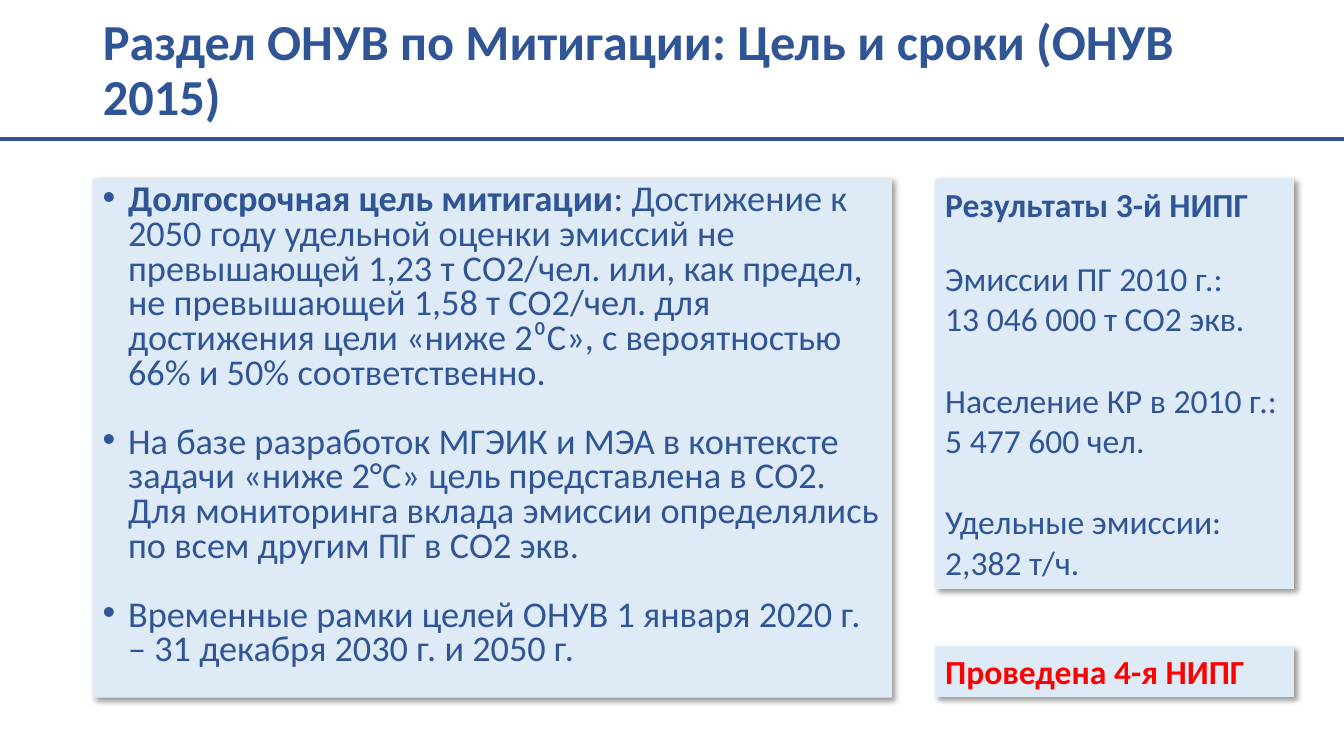
from dataclasses import dataclass

from lxml.etree import SubElement as Sub
from pptx import Presentation
from pptx.dml.color import RGBColor as Rgb
from pptx.enum.shapes import MSO_CONNECTOR as Conn, MSO_SHAPE as Kind
from pptx.enum.text import MSO_ANCHOR as Anchor, PP_ALIGN as Align
from pptx.oxml.ns import qn
from pptx.util import Cm, Pt


@dataclass(frozen=True)
class Theme:
    """Colours, font and type sizes of the slide."""
    ink: Rgb = Rgb(0x2F, 0x55, 0x97)
    pale: Rgb = Rgb(0xDE, 0xEB, 0xF7)
    alert: Rgb = Rgb(0xFF, 0, 0)
    font: str = "Calibri"
    head: float = 36
    body: float = 25.9
    side: float = 24


THEME = Theme()
WIDE, HIGH = 33.87, 19.05
LEFT, TOP, SIDE = 2.34, 4.5, 23.57

GOALS = [
    [("Долгосрочная цель митигации", True),
     (": Достижение к 2050 году удельной оценки эмиссий не превышающей "
      "1,23 т СО2/чел. или, как предел, не превышающей 1,58 т СО2/чел. для "
      "достижения цели «ниже 2⁰С», с вероятностью 66% и 50% соответственно.", False)],
    [("На базе разработок МГЭИК и МЭА в контексте задачи «ниже 2°C» цель "
      "представлена в СО2. Для мониторинга вклада эмиссии определялись "
      "по всем другим ПГ в СО2 экв.", False)],
    [("Временные рамки целей ОНУВ 1 января 2020 г. – 31 декабря 2030 г. "
      "и 2050 г.", False)],
]
FACTS = [
    ("Эмиссии ПГ 2010 г.:", "13 046 000 т СО2 экв.", 24.4),
    ("Население КР в 2010 г.:", "5 477 600 чел.", 29.3),
    ("Удельные эмиссии:", "2,382 т/ч.", 29.3),
]


def write(para, text, size, bold=False, color=THEME.ink):
    """Add one formatted run to a paragraph."""
    run = para.add_run()
    run.text = text
    font = run.font
    font.name, font.size, font.bold = THEME.font, Pt(size), bold
    font.color.rgb = color


def lines(frame, count):
    """Yield the given number of left-aligned paragraphs of a frame."""
    for i in range(count):
        para = frame.add_paragraph() if i else frame.paragraphs[0]
        para.alignment = Align.LEFT
        yield para


def bullet(para):
    """Give a paragraph a hanging round bullet."""
    props = para._p.get_or_add_pPr()
    props.set("marL", str(Cm(0.64)))
    props.set("indent", str(-Cm(0.64)))
    Sub(props, qn("a:buFont"), typeface="Arial")
    Sub(props, qn("a:buChar"), char="•")


def panel(slide, x, y, w, h):
    """Draw a pale card with a soft shadow and return its text frame."""
    card = slide.shapes.add_shape(Kind.RECTANGLE, Cm(x), Cm(y), Cm(w), Cm(h))
    card.fill.solid()
    card.fill.fore_color.rgb = THEME.pale
    card.line.fill.background()
    card.shadow.inherit = False
    glow = Sub(card._element.spPr.find(qn("a:effectLst")), qn("a:outerShdw"),
               blurRad=str(Pt(4)), dist=str(Pt(3)), dir=str(45 * 60000),
               algn="tl", rotWithShape="0")
    tint = Sub(glow, qn("a:srgbClr"), val="000000")
    Sub(tint, qn("a:alpha"), val="40000")
    frame = card.text_frame
    frame.word_wrap = True
    frame.vertical_anchor = Anchor.TOP
    return frame


def header(slide, x, y, w, h):
    """Place the title and the rule beneath it."""
    title = slide.shapes.title
    title.left, title.top, title.width, title.height = Cm(x), Cm(y), Cm(w), Cm(h)
    frame = title.text_frame
    frame.word_wrap = True
    frame.vertical_anchor = Anchor.MIDDLE
    para = next(lines(frame, 1))
    para.line_spacing = 0.9
    write(para, "Раздел ОНУВ по Митигации: Цель и сроки (ОНУВ 2015)", THEME.head, True)
    base = Cm(y + h + 0.25)
    rule = slide.shapes.add_connector(Conn.STRAIGHT, 0, base, Cm(WIDE), base)
    rule.line.color.rgb = THEME.ink
    rule.line.width = Pt(3)
    Sub(rule._element.spPr, qn("a:effectLst"))


def goals(slide, x, y, w, h):
    """Place the card of bulleted goals."""
    frame = panel(slide, x, y, w, h)
    for para, parts in zip(lines(frame, len(GOALS)), GOALS):
        para.line_spacing = 0.8
        para.space_after = Pt(0 if parts is GOALS[-1] else 24)
        bullet(para)
        for text, bold in parts:
            write(para, text, THEME.body, bold)


def facts(slide, x, y, w, h):
    """Place the card of inventory results."""
    rows = lines(panel(slide, x, y, w, h), 1 + 2 * len(FACTS))
    write(next(rows), "Результаты 3-й НИПГ", THEME.side, True)
    for label, value, gap in FACTS:
        para = next(rows)
        para.space_before = Pt(gap)
        write(para, label, THEME.side)
        write(next(rows), value, THEME.side)


def status(slide, x, y, w, h):
    """Place the card with the highlighted status."""
    para = next(lines(panel(slide, x, y, w, h), 1))
    write(para, "Проведена 4-я НИПГ", THEME.side, True, THEME.alert)


def main():
    """Build and save the slide."""
    deck = Presentation()
    deck.slide_width, deck.slide_height = Cm(WIDE), Cm(HIGH)
    slide = deck.slides.add_slide(deck.slide_layouts[5])
    header(slide, LEFT, 0.36, 30.3, 2.9)
    goals(slide, LEFT, TOP, 20.14, 13.08)
    facts(slide, SIDE, TOP, 9.04, 10.34)
    status(slide, SIDE, 16.28, 9.04, 1.28)
    deck.save("out.pptx")


if __name__ == "__main__":
    main()
